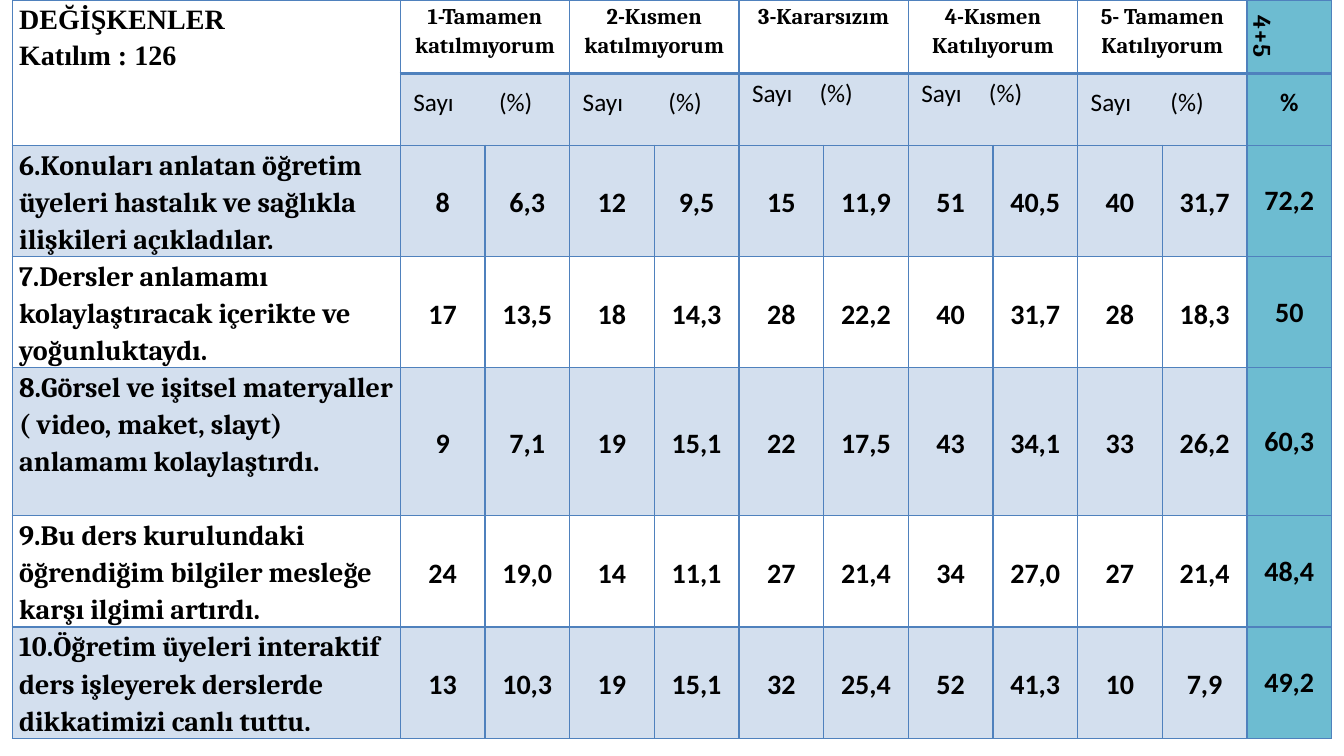
"""Builds a one-slide survey table of course evaluation answers."""
from lxml import etree
from pptx import Presentation
from pptx import util as u
from pptx.dml.color import RGBColor
from pptx.enum import text
from pptx.oxml import ns

COLORS = {"ink": "000000", "border": "4F81BD", "band": "D3DFEE", "total": "6DBCD1"}
CENTER, LEFT = text.PP_ALIGN.CENTER, text.PP_ALIGN.LEFT
TOP, MIDDLE = text.MSO_ANCHOR.TOP, text.MSO_ANCHOR.MIDDLE
WIDE = (0.07, 0, 0.07, 0)

STYLES = {
    "title": dict(name="Times New Roman", size=20, align=LEFT, anchor=TOP),
    "answer": dict(name="Cambria", size=16, align=CENTER, anchor=TOP),
    "sum": dict(name="Cambria", size=18, align=CENTER, anchor=TOP),
    "unit": dict(name="Calibri", size=18, align=LEFT, anchor=MIDDLE, bold=False, spacing=u.Pt(13)),
    "percent": dict(name="Calibri", size=18, align=CENTER, anchor=MIDDLE, spacing=u.Pt(13)),
    "question": dict(name="Cambria", size=20, align=LEFT, anchor=TOP),
    "value": dict(name="Calibri", size=20, align=CENTER, anchor=MIDDLE),
    "total": dict(name="Calibri", size=20, align=CENTER, anchor=MIDDLE, spacing=1.0),
}
ANSWERS = [
    ("1-Tamamen katılmıyorum", 0.85, 0),
    ("2-Kısmen katılmıyorum", 0.85, 0),
    ("3-Kararsızım", 0.67, 0.18),
    ("4-Kısmen Katılıyorum", 0.67, 0.18),
    ("5- Tamamen Katılıyorum", 0.79, 0),
]
QUESTIONS = [
    ("6.Konuları anlatan öğretim üyeleri hastalık ve sağlıkla ilişkileri açıkladılar.",
     "8 6,3 12 9,5 15 11,9 51 40,5 40 31,7 72,2"),
    ("7.Dersler anlamamı kolaylaştıracak içerikte ve yoğunluktaydı.",
     "17 13,5 18 14,3 28 22,2 40 31,7 28 18,3 50"),
    ("8.Görsel ve işitsel materyaller ( video, maket, slayt) anlamamı kolaylaştırdı.",
     "9 7,1 19 15,1 22 17,5 43 34,1 33 26,2 60,3"),
    ("9.Bu ders kurulundaki öğrendiğim bilgiler mesleğe karşı ilgimi artırdı.",
     "24 19,0 14 11,1 27 21,4 34 27,0 27 21,4 48,4"),
    ("10.Öğretim üyeleri interaktif ders işleyerek derslerde dikkatimizi canlı tuttu.",
     "13 10,3 19 15,1 32 25,4 52 41,3 10 7,9 49,2"),
]
WIDTHS = [3.85] + [0.84] * 11
HEIGHTS = [0.73, 0.71, 1.1, 1.1, 1.47, 1.1, 1.1]


def write(cell, lines, style, insets=WIDE):
    look = STYLES[style]
    cell.vertical_anchor = look["anchor"]
    for side, inset in zip(("left", "top", "right", "bottom"), insets):
        setattr(cell, f"margin_{side}", u.Inches(inset))
    cell.text_frame.text = lines
    for para in cell.text_frame.paragraphs:
        para.alignment = look["align"]
        para.line_spacing = look.get("spacing", 1.15)
        for span in para.runs:
            settings = dict(name=look["name"], size=u.Pt(look["size"]), bold=look.get("bold", True))
            for key, value in settings.items():
                setattr(span.font, key, value)
            span.font.color.rgb = RGBColor.from_string(COLORS["ink"])


def add_border(cell, position, side, width):
    line = etree.Element(ns.qn(f"a:ln{side}"), w=str(u.Pt(width)))
    fill = etree.SubElement(line, ns.qn("a:solidFill"))
    etree.SubElement(fill, ns.qn("a:srgbClr"), val=COLORS["border"])
    cell._tc.get_or_add_tcPr().insert(position, line)


deck = Presentation()
deck.slide_width, deck.slide_height = u.Inches(13.33), u.Inches(7.5)
page = deck.slides.add_slide(deck.slide_layouts[6])
frame = page.shapes.add_table(len(HEIGHTS), len(WIDTHS), u.Inches(0.12), 0,
                              u.Inches(sum(WIDTHS)), u.Inches(sum(HEIGHTS)))
survey = frame.table
survey.first_row = survey.horz_banding = False
for column, width in zip(survey.columns, WIDTHS):
    column.width = u.Inches(width)
for row, height in zip(survey.rows, HEIGHTS):
    row.height = u.Inches(height)

last = len(WIDTHS) - 1
for r in range(len(HEIGHTS)):
    for c in range(len(WIDTHS)):
        cell = survey.cell(r, c)
        banded = r in (2, 4, 6) or (r == 1 and c > 0)
        color = "total" if c == last else "band" if banded else None
        if color:
            cell.fill.solid()
            cell.fill.fore_color.rgb = RGBColor.from_string(COLORS[color])
        else:
            cell.fill.background()
        for position, side in enumerate("LRTB"):
            heavy = c > 0 and (r, side) in ((0, "B"), (1, "T"))
            add_border(cell, position, side, 2.25 if heavy else 1)

survey.cell(0, 0).merge(survey.cell(1, 0))
write(survey.cell(0, 0), "DEĞİŞKENLER\nKatılım : 126", "title")
for number, (answer, tab, lift) in enumerate(ANSWERS):
    c = 1 + 2 * number
    for r in (0, 1):
        survey.cell(r, c).merge(survey.cell(r, c + 1))
    write(survey.cell(0, c), answer, "answer")
    unit = survey.cell(1, c)
    write(unit, "Sayı\t(%)", "unit", (0.13, 0, 0.07, lift))
    properties = unit.text_frame.paragraphs[0]._p.get_or_add_pPr()
    stops = etree.SubElement(properties, ns.qn("a:tabLst"))
    etree.SubElement(stops, ns.qn("a:tab"), pos=str(u.Inches(tab)), algn="l")

write(survey.cell(0, last), "4+5", "sum")
survey.cell(0, last)._tc.get_or_add_tcPr().set("vert", "vert")
write(survey.cell(1, last), "%", "percent")

for r, (question, values) in enumerate(QUESTIONS, 2):
    write(survey.cell(r, 0), question, "question")
    *counts, total = values.split()
    for c, value in enumerate(counts, 1):
        write(survey.cell(r, c), value, "value")
    write(survey.cell(r, last), total, "total", (0.01, 0.01, 0.01, 0))

deck.save("out.pptx")
